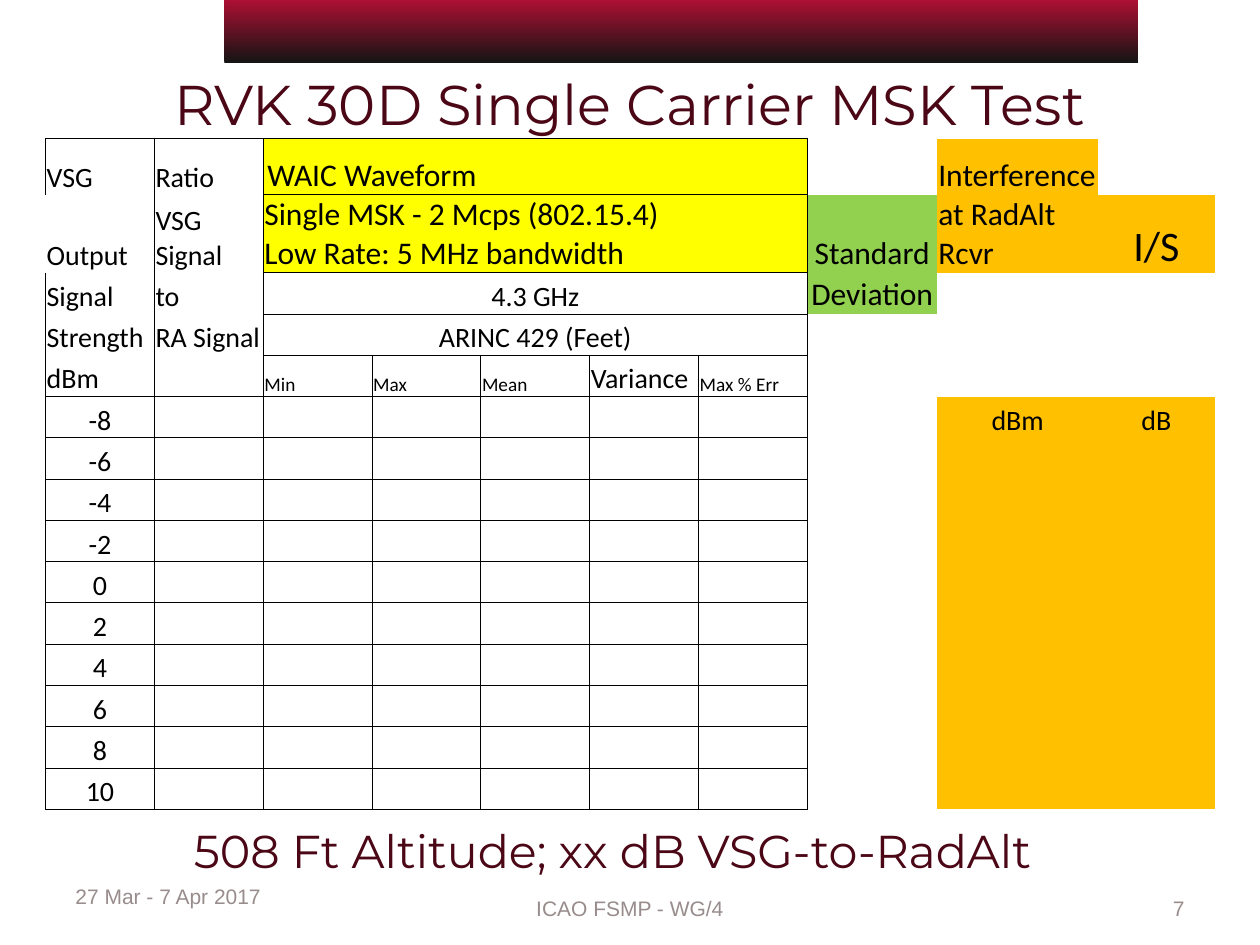
"""Build the RVK 30D single carrier MSK test slide."""
from dataclasses import dataclass

from lxml import etree
from pptx import Presentation
from pptx.dml.color import RGBColor
from pptx.enum.shapes import MSO_SHAPE
from pptx.enum.text import MSO_ANCHOR, PP_ALIGN
from pptx.oxml.ns import qn
from pptx.slide import Slide
from pptx.table import Table
from pptx.util import Pt

LEFT, CENTER, RIGHT = PP_ALIGN.LEFT, PP_ALIGN.CENTER, PP_ALIGN.RIGHT
MIDDLE, BOTTOM = MSO_ANCHOR.MIDDLE, MSO_ANCHOR.BOTTOM
RECTANGLE = MSO_SHAPE.RECTANGLE

MAROON, GREY, BLACK = "4B0716", "988C8C", "000000"
YELLOW, GREEN, ORANGE, WHITE = "FFFF00", "92D050", "FFC000", "FFFFFF"

COLUMN_WIDTHS = [62.2] * 7 + [74.2, 92, 66.6]
ROW_HEIGHTS = [32, 44.6] + [23.6] * 13
FIRST_LEVEL_ROW = 5


@dataclass(frozen=True)
class Caption:
    """A line of text outside the table."""
    text: str
    left: float
    top: float
    width: float
    height: float
    size: float
    font: str
    color: str
    align: PP_ALIGN


@dataclass(frozen=True)
class Entry:
    """The text of one table cell."""
    row: int
    column: int
    text: str
    size: float = 16
    align: PP_ALIGN = LEFT
    span: int = 1


CAPTIONS = [
    Caption("RVK 30D Single Carrier MSK Test", 36, 38.2, 648, 41, 32, "Montserrat", MAROON, CENTER),
    Caption("508 Ft Altitude; xx dB VSG-to-RadAlt", 26, 466.6, 648, 38.2, 26.3, "Montserrat", MAROON, CENTER),
    Caption("27 Mar - 7 Apr 2017", 36, 497.5, 168, 28.8, 12, "Arial", GREY, LEFT),
    Caption("ICAO FSMP - WG/4", 210, 504.7, 300, 28.8, 12, "Arial", GREY, CENTER),
    Caption("7", 516, 504.7, 168, 28.8, 12, "Arial", GREY, RIGHT),
]

SIGNAL_HEADINGS = [
    Entry(row, 0, text) for row, text in enumerate(["VSG", "Output", "Signal", "Strength", "dBm"])
]
RATIO_HEADINGS = [
    Entry(row, 1, text) for row, text in enumerate(["Ratio", "VSG Signal", "to", "RA Signal"])
]
STATISTICS = [
    Entry(4, column, text, 16 if text == "Variance" else 11)
    for column, text in enumerate(["Min", "Max", "Mean", "Variance", "Max % Err"], 2)
]
SIGNAL_LEVELS = [
    Entry(row, 0, str(level), align=CENTER)
    for row, level in enumerate(range(-8, 11, 2), FIRST_LEVEL_ROW)
]
ENTRIES = SIGNAL_HEADINGS + RATIO_HEADINGS + STATISTICS + SIGNAL_LEVELS + [
    Entry(0, 2, "WAIC Waveform", 18, CENTER, 2),
    Entry(1, 2, "Single MSK - 2 Mcps (802.15.4)\nLow Rate: 5 MHz bandwidth", 18, span=4),
    Entry(2, 2, "4.3 GHz", align=CENTER, span=5),
    Entry(3, 2, "ARINC 429 (Feet)", align=CENTER, span=5),
    Entry(1, 7, "Standard", 18, CENTER),
    Entry(2, 7, "Deviation", 18, CENTER),
    Entry(0, 8, "Interference", 18),
    Entry(1, 8, "at RadAlt Rcvr", 18),
    Entry(1, 9, "I/S", 24, CENTER),
    Entry(5, 8, "dBm", align=CENTER),
    Entry(5, 9, "dB", align=CENTER),
]


def rgb(value: str) -> RGBColor:
    """Turn a hex string into a colour."""
    return RGBColor.from_string(value)


def add_run(paragraph, text: str, size: float, font: str, color: str) -> None:
    """Append one styled run."""
    run = paragraph.add_run()
    run.text = text
    run.font.size = Pt(size)
    run.font.name = font
    run.font.color.rgb = rgb(color)


def add_banner(slide: Slide) -> None:
    """Draw the gradient band at the top."""
    banner = slide.shapes.add_shape(RECTANGLE, Pt(128.2), Pt(0), Pt(522), Pt(36))
    banner.shadow.inherit = False
    banner.line.fill.background()
    banner.fill.gradient()
    banner.fill.gradient_angle = 90
    for stop, position, color in zip(banner.fill.gradient_stops, (0, 1), ("141414", "AD1033")):
        stop.position = position
        stop.color.rgb = rgb(color)


def add_caption(slide: Slide, caption: Caption) -> None:
    """Place one caption."""
    box = slide.shapes.add_textbox(
        Pt(caption.left), Pt(caption.top), Pt(caption.width), Pt(caption.height))
    frame = box.text_frame
    frame.word_wrap = True
    frame.vertical_anchor = MIDDLE
    paragraph = frame.paragraphs[0]
    paragraph.alignment = caption.align
    add_run(paragraph, caption.text, caption.size, caption.font, caption.color)


def ruled_sides(row: int, column: int) -> str:
    """Name the sides of a cell that carry a rule."""
    if column > 6:
        return "L" if column == 7 else ""
    if column < 2 and row < FIRST_LEVEL_ROW:
        return {(0, 0): "LRT", (0, 1): "LRT", (1, 0): "R",
                (4, 0): "LRB", (4, 1): "LRB"}.get((row, column), "LR")
    if row < 4:
        return "TB" + {2: "L", 6: "R"}.get(column, "")
    return "LRTB"


def cell_color(row: int, column: int) -> str | None:
    """Give the fill of a cell, if it has one."""
    if row < 2 and 2 <= column <= 6:
        return YELLOW
    if column == 7 and row in (1, 2):
        return GREEN
    if row == 0 and column in (7, 9):
        return WHITE
    if column > 7 and (row < 2 or row >= FIRST_LEVEL_ROW):
        return ORANGE
    return None


def style_cell(table: Table, row: int, column: int) -> None:
    """Set margins, rules and fill of a cell."""
    cell = table.cell(row, column)
    cell.margin_left = cell.margin_right = cell.margin_top = Pt(0.7)
    cell.margin_bottom = Pt(0)
    cell.vertical_anchor = BOTTOM
    properties = cell._tc.get_or_add_tcPr()
    sides = ruled_sides(row, column)
    for side in "LRTB":
        rule = etree.SubElement(properties, qn(f"a:ln{side}"), w=str(Pt(0.5)))
        if side in sides:
            solid = etree.SubElement(rule, qn("a:solidFill"))
            etree.SubElement(solid, qn("a:srgbClr"), val=BLACK)
        else:
            etree.SubElement(rule, qn("a:noFill"))
    color = cell_color(row, column)
    if color:
        cell.fill.solid()
        cell.fill.fore_color.rgb = rgb(color)
    else:
        cell.fill.background()


def write_entry(table: Table, entry: Entry) -> None:
    """Fill in the text of a cell, joining cells where it spans."""
    cell = table.cell(entry.row, entry.column)
    if entry.span > 1:
        cell.merge(table.cell(entry.row, entry.column + entry.span - 1))
    for index, line in enumerate(entry.text.split("\n")):
        paragraph = cell.text_frame.add_paragraph() if index else cell.text_frame.paragraphs[0]
        paragraph.alignment = entry.align
        add_run(paragraph, line, entry.size, "Calibri", BLACK)


def add_results(slide: Slide) -> None:
    """Draw the test result table."""
    table = slide.shapes.add_table(
        len(ROW_HEIGHTS), len(COLUMN_WIDTHS), Pt(26), Pt(79.2),
        Pt(sum(COLUMN_WIDTHS)), Pt(sum(ROW_HEIGHTS))).table
    table.first_row = table.horz_banding = False
    for column, width in zip(table.columns, COLUMN_WIDTHS):
        column.width = Pt(width)
    for row, height in enumerate(ROW_HEIGHTS):
        table.rows[row].height = Pt(height)
        for column in range(len(COLUMN_WIDTHS)):
            style_cell(table, row, column)
    for entry in ENTRIES:
        write_entry(table, entry)


def main() -> None:
    """Build and save the slide."""
    deck = Presentation()
    deck.slide_width, deck.slide_height = Pt(720), Pt(540)
    slide = deck.slides.add_slide(deck.slide_layouts[6])
    add_banner(slide)
    add_results(slide)
    for caption in CAPTIONS:
        add_caption(slide, caption)
    deck.save("out.pptx")


if __name__ == "__main__":
    main()
